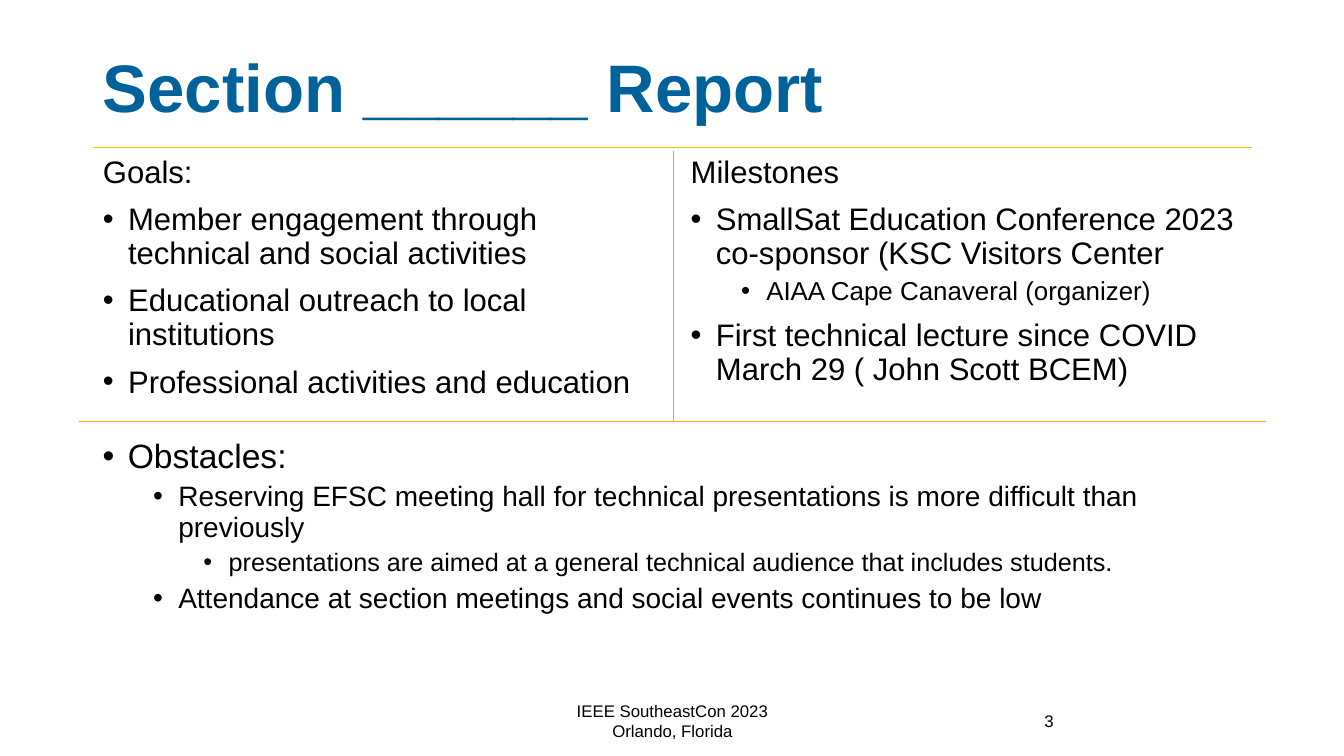
"""Build the section report slide with goals, milestones and obstacles."""
from lxml.etree import SubElement
from pptx import Presentation
from pptx.dml.color import RGBColor
from pptx.enum.shapes import MSO_CONNECTOR
from pptx.enum.text import MSO_ANCHOR, MSO_AUTO_SIZE, PP_ALIGN
from pptx.oxml.ns import qn
from pptx.util import Inches, Pt

TITLE = "Section ______ Report"
BLUE, BLACK, GOLD, ORANGE = "00629B", "000000", "F6BE07", "FFA300"
LEFT, WIDE, HALF = 0.92, 11.5, 5.67
PLAIN = -1

GOALS = [
    (PLAIN, "Goals:"),
    (0, "Member engagement through technical and social activities"),
    (0, "Educational outreach to local institutions"),
    (0, "Professional activities and education"),
]
MILES = [
    (PLAIN, "Milestones"),
    (0, "SmallSat Education Conference 2023 co-sponsor (KSC Visitors Center"),
    (1, "AIAA Cape Canaveral (organizer)"),
    (0, "First technical lecture since COVID March 29 ( John Scott BCEM)"),
]
SNAGS = [
    (0, "Obstacles:"),
    (1, "Reserving EFSC meeting hall for technical presentations is more difficult than previously"),
    (2, "presentations are aimed at a general technical audience that includes students."),
    (1, "Attendance at section meetings and social events continues to be low"),
]
FOOT = ["IEEE SoutheastCon 2023", "Orlando, Florida"]
PAGE = ["3"]
RULES = [
    (LEFT, 1.46, LEFT + WIDE, 1.46, GOLD, 0.5),
    (6.68, 1.5, 6.68, 4.18, ORANGE, 1),
    (0.78, 4.18, 12.56, 4.18, ORANGE, 1),
]


def color(code):
    return RGBColor.from_string(code)


def place(shape, left, top, width, height):
    shape.left, shape.top = Inches(left), Inches(top)
    shape.width, shape.height = Inches(width), Inches(height)
    frame = shape.text_frame
    frame.word_wrap = True
    frame.auto_size = MSO_AUTO_SIZE.NONE
    return frame


def style(para, size, code=BLACK, bold=False):
    for run in para.runs:
        font = run.font
        font.name, font.size, font.bold = "Arial", Pt(size), bold
        font.color.rgb = color(code)


def add_para(frame, num, text):
    para = frame.add_paragraph() if num else frame.paragraphs[0]
    para.text = text
    return para


def bullet(para, level):
    props = para._p.get_or_add_pPr()
    if level == PLAIN:
        props.set("marL", "0")
        props.set("indent", "0")
        SubElement(props, qn("a:buNone"))
        return
    props.set("marL", str(Inches(0.25 + 0.5 * level)))
    props.set("indent", str(Inches(-0.25)))
    SubElement(props, qn("a:buFont")).set("typeface", "Arial")
    SubElement(props, qn("a:buChar")).set("char", "•")


def fill_list(frame, items, sizes):
    frame.vertical_anchor = MSO_ANCHOR.TOP
    for num, (level, text) in enumerate(items):
        para = add_para(frame, num, text)
        depth = max(level, 0)
        bullet(para, level)
        para.level = depth
        para.alignment = PP_ALIGN.LEFT
        para.line_spacing = 0.9
        para.space_before = Pt(0 if num == 0 else 5 if depth else 10)
        style(para, sizes[depth])


def add_note(slide, area, lines, align):
    frame = place(slide.shapes.add_textbox(0, 0, 0, 0), *area)
    frame.vertical_anchor = MSO_ANCHOR.MIDDLE
    for num, text in enumerate(lines):
        para = add_para(frame, num, text)
        para.alignment = align
        style(para, 12)


def add_rule(slide, x1, y1, x2, y2, code, width):
    ends = [Inches(val) for val in (x1, y1, x2, y2)]
    rule = slide.shapes.add_connector(MSO_CONNECTOR.STRAIGHT, *ends)
    rule.line.color.rgb = color(code)
    rule.line.width = Pt(width)
    SubElement(rule._element.spPr, qn("a:effectLst"))


def main():
    deck = Presentation()
    deck.slide_width, deck.slide_height = Inches(13.33), Inches(7.5)
    slide = deck.slides.add_slide(deck.slide_layouts[3])
    title, goals, miles = slide.placeholders

    frame = place(title, LEFT, 0.4, 10.26, 1)
    frame.text = TITLE
    frame.vertical_anchor = MSO_ANCHOR.MIDDLE
    head = frame.paragraphs[0]
    head.alignment, head.line_spacing = PP_ALIGN.LEFT, 0.9
    style(head, 48, BLUE, True)

    small = (22.2, 18.5)
    fill_list(place(goals, LEFT, 1.5, HALF, 2.72), GOALS, small)
    fill_list(place(miles, LEFT + WIDE - HALF, 1.5, HALF, 2.43), MILES, small)
    snags = slide.shapes.add_textbox(0, 0, 0, 0)
    fill_list(place(snags, LEFT, 4.31, WIDE, 2.25), SNAGS, (24, 20, 18))

    add_note(slide, (4.42, 6.95, 4.5, 0.4), FOOT, PP_ALIGN.CENTER)
    add_note(slide, (10.26, 6.95, 2.16, 0.4), PAGE, PP_ALIGN.LEFT)
    for rule in RULES:
        add_rule(slide, *rule)
    deck.save("out.pptx")


if __name__ == "__main__":
    main()
